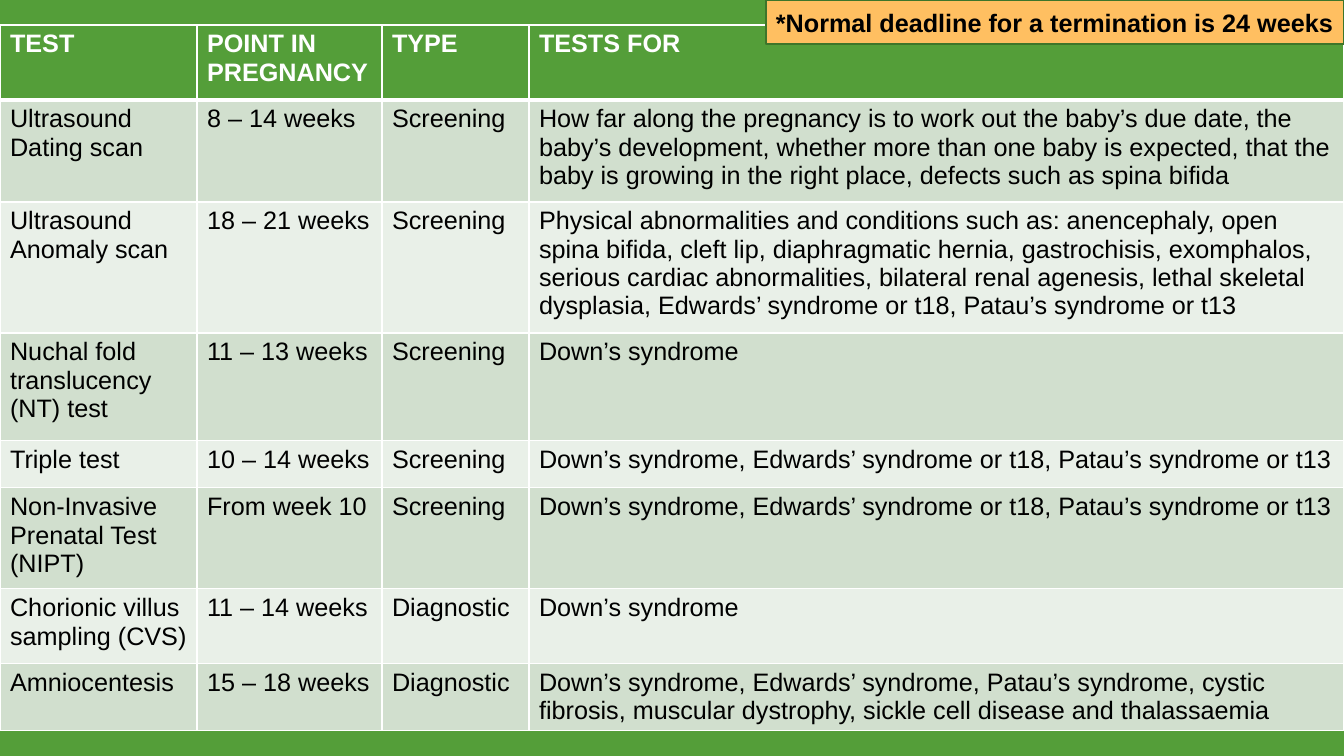
from dataclasses import dataclass

from lxml.etree import SubElement
from pptx import Presentation
from pptx.dml.color import RGBColor as Rgb
from pptx.enum.shapes import MSO_SHAPE as Shape
from pptx.enum.text import MSO_ANCHOR as Anchor, PP_ALIGN as Align
from pptx.oxml.ns import qn
from pptx.slide import Slide
from pptx.table import _Cell as Cell
from pptx.text.text import TextFrame as Frame
from pptx.util import Emu, Pt

WIDE, HIGH = 1344, 756
SCALE = 12192000 / WIDE
FONT, SIZE = "Arial", 18
COLORS = {
    "green": "549E39",
    "edge": "3E752A",
    "odd": "D1DFCE",
    "even": "E9F0E8",
    "note": "FFBF61",
    "white": "FFFFFF",
    "black": "000000",
}
COLS = [197, 185, 147, 815]
TOP = 25


@dataclass
class Row:
    high: int
    test: str
    point: str
    kind: str
    finds: str


TRIO = "Down’s syndrome, Edwards’ syndrome or t18, Patau’s syndrome or t13"
ROWS = [
    Row(75, "TEST", "POINT IN PREGNANCY", "TYPE", "TESTS FOR"),
    Row(102, "Ultrasound Dating scan", "8 – 14 weeks", "Screening",
        "How far along the pregnancy is to work out the baby’s due date, the "
        "baby’s development, whether more than one baby is expected, that the "
        "baby is growing in the right place, defects such as spina bifida"),
    Row(131, "Ultrasound Anomaly scan", "18 – 21 weeks", "Screening",
        "Physical abnormalities and conditions such as: anencephaly, open "
        "spina bifida, cleft lip, diaphragmatic hernia, gastrochisis, exomphalos, "
        "serious cardiac abnormalities, bilateral renal agenesis, lethal skeletal "
        "dysplasia, Edwards’ syndrome or t18, Patau’s syndrome or t13"),
    Row(108, "Nuchal fold translucency (NT) test", "11 – 13 weeks", "Screening",
        "Down’s syndrome"),
    Row(47, "Triple test", "10 – 14 weeks", "Screening", TRIO),
    Row(101, "Non-Invasive Prenatal Test (NIPT)", "From week 10", "Screening", TRIO),
    Row(75, "Chorionic villus sampling (CVS)", "11 – 14 weeks", "Diagnostic",
        "Down’s syndrome"),
    Row(67, "Amniocentesis", "15 – 18 weeks", "Diagnostic",
        "Down’s syndrome, Edwards’ syndrome, Patau’s syndrome, cystic fibrosis, "
        "muscular dystrophy, sickle cell disease and thalassaemia"),
]


def px(count: int) -> Emu:
    return Emu(round(count * SCALE))


def rgb(name: str) -> Rgb:
    return Rgb.from_string(COLORS[name])


def write(frame: Frame, text: str, color: str, bold: bool) -> None:
    frame.word_wrap = True
    para = frame.paragraphs[0]
    para.alignment = Align.LEFT
    run = para.add_run()
    run.text = text
    font = run.font
    font.name, font.size, font.bold = FONT, Pt(SIZE), bold
    font.color.rgb = rgb(color)


def border(cell: Cell, top: int, base: int) -> None:
    props = cell._tc.get_or_add_tcPr()
    for side, width in (("L", 1), ("R", 1), ("T", top), ("B", base)):
        line = SubElement(props, qn(f"a:ln{side}"), w=str(Pt(width)))
        fill = SubElement(line, qn("a:solidFill"))
        SubElement(fill, qn("a:srgbClr"), val=COLORS["white"])


def draw_table(slide: Slide) -> None:
    total = sum(row.high for row in ROWS)
    grid = slide.shapes.add_table(
        len(ROWS), len(COLS), px(0), px(TOP), px(WIDE), px(total)).table
    for col, width in zip(grid.columns, COLS):
        col.width = px(width)
    for i, row in enumerate(ROWS):
        grid.rows[i].height = px(row.high)
        head = i == 0
        shade = "green" if head else ("odd" if i % 2 else "even")
        for j, text in enumerate((row.test, row.point, row.kind, row.finds)):
            cell = grid.cell(i, j)
            # Thick rule between the header and the body
            border(cell, 3 if i == 1 else 1, 3 if head else 1)
            cell.fill.solid()
            cell.fill.fore_color.rgb = rgb(shade)
            write(cell.text_frame, text, "white" if head else "black", head)


def draw_note(slide: Slide) -> None:
    note = slide.shapes.add_shape(
        Shape.RECTANGLE, px(766), px(0), px(578), px(44))
    note.shadow.inherit = False
    note.fill.solid()
    note.fill.fore_color.rgb = rgb("note")
    note.line.color.rgb = rgb("edge")
    note.line.width = Pt(1.5)
    frame = note.text_frame
    frame.vertical_anchor = Anchor.MIDDLE
    write(frame, "*Normal deadline for a termination is 24 weeks", "black", True)


def main() -> None:
    deck = Presentation()
    deck.slide_width, deck.slide_height = px(WIDE), px(HIGH)
    slide = deck.slides.add_slide(deck.slide_layouts[6])

    # Background
    back = slide.background.fill
    back.solid()
    back.fore_color.rgb = rgb("green")

    # Table of tests, then the deadline note above it
    draw_table(slide)
    draw_note(slide)
    deck.save("out.pptx")


if __name__ == "__main__":
    main()
